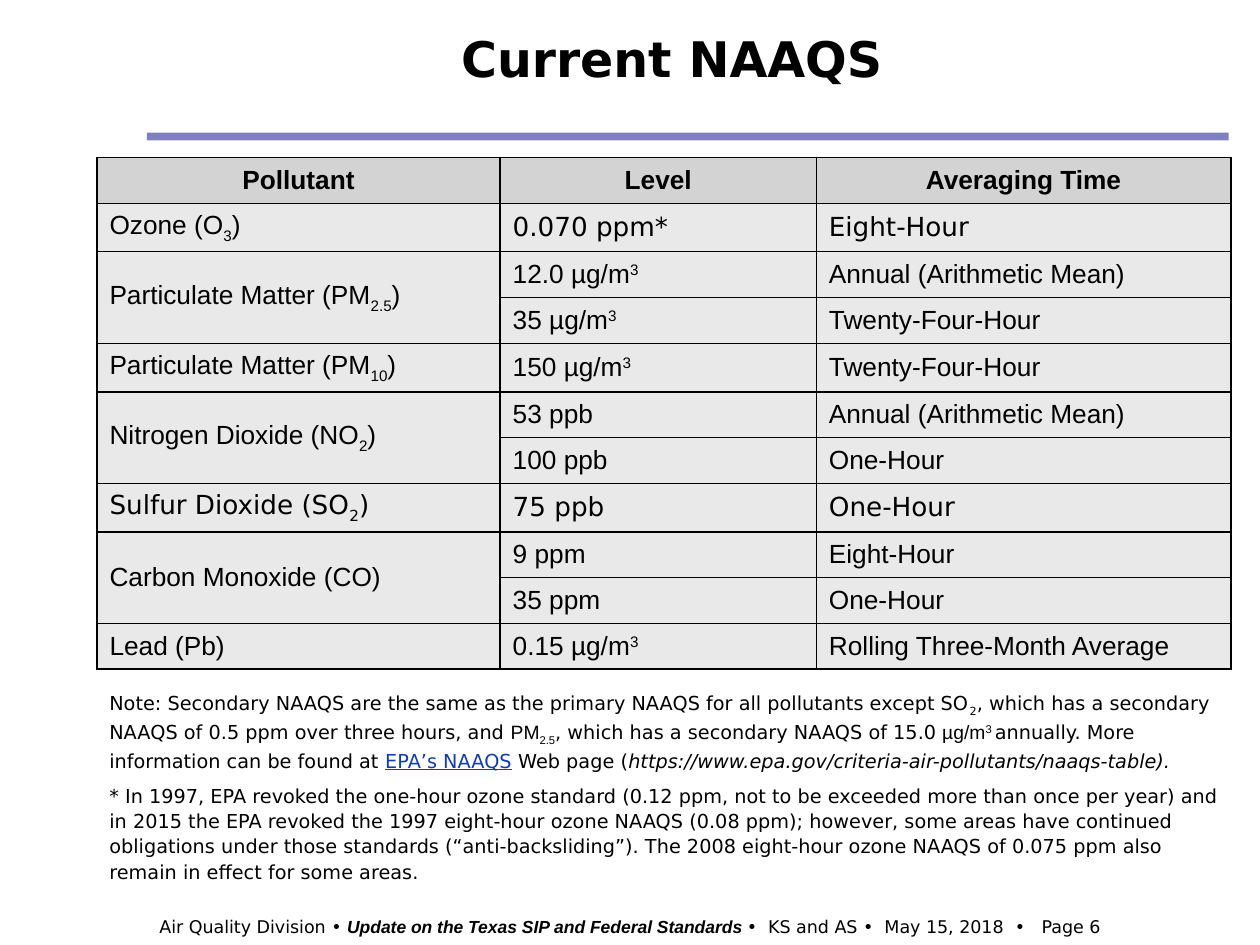
from lxml.etree import SubElement
from pptx import Presentation
from pptx.dml.color import RGBColor
from pptx.enum.shapes import MSO_CONNECTOR, MSO_SHAPE
from pptx.enum.text import MSO_ANCHOR, PP_ALIGN
from pptx.oxml.ns import qn
from pptx.util import Pt

COLORS = {"text": "000000", "rule": "000086", "head": "D3D3D3",
          "body": "E9E9E9", "paper": "FFFFFF", "link": "103CB6"}
SANS, ARIAL = "DejaVu Sans", "Arial"
BASELINES = {"_": "-25000", "^": "30000"}

TITLE = "Current NAAQS"
HEADERS = ["Pollutant", "Level", "Averaging Time"]
POLLUTANTS = [
    ("Ozone (O|_3|)", ARIAL, [("0.070 ppm*", "Eight-Hour", SANS)]),
    ("Particulate Matter (PM|_2.5|)", ARIAL,
     [("12.0 µg/m|^3", "Annual (Arithmetic Mean)", ARIAL),
      ("35 µg/m|^3", "Twenty-Four-Hour", ARIAL)]),
    ("Particulate Matter (PM|_10|)", ARIAL,
     [("150 µg/m|^3", "Twenty-Four-Hour", ARIAL)]),
    ("Nitrogen Dioxide (NO|_2|)", ARIAL,
     [("53 ppb", "Annual (Arithmetic Mean)", ARIAL),
      ("100 ppb", "One-Hour", ARIAL)]),
    ("Sulfur Dioxide (SO|_2|)", SANS, [("75 ppb", "One-Hour", SANS)]),
    ("Carbon Monoxide (CO)", ARIAL,
     [("9 ppm", "Eight-Hour", ARIAL), ("35 ppm", "One-Hour", ARIAL)]),
    ("Lead (Pb)", ARIAL,
     [("0.15 µg/m|^3", "Rolling Three-Month Average", ARIAL)]),
]
NOTES = [
    [("Note: Secondary NAAQS are the same as the primary NAAQS for all "
      "pollutants except SO|_2|, which has a secondary NAAQS of 0.5 ppm over "
      "three hours, and ", {}),
     ("PM|_2.5", {"name": ARIAL}),
     (", which has a secondary NAAQS of 15.0", {}),
     (" µg/m|^3 ", {"name": ARIAL}),
     ("annually. More information can be found at ", {}),
     ("EPA’s NAAQS", {"color": "link", "underline": True}),
     (" Web page (", {}),
     ("https://www.epa.gov/criteria-air-pollutants/naaqs-table).",
      {"italic": True})],
    [("* In 1997, EPA revoked the one-hour ozone standard (0.12 ppm, not to be "
      "exceeded more than once per year) and in 2015 the EPA revoked the 1997 "
      "eight-hour ozone NAAQS (0.08 ppm); however, some areas have continued "
      "obligations under those standards (“anti-backsliding”). The 2008 "
      "eight-hour ozone NAAQS of 0.075 ppm also remain in effect for some "
      "areas.", {})],
]
FOOTER = [
    ("Air Quality Division • ", {"name": SANS}),
    ("Update on the Texas SIP and Federal Standards ",
     {"name": ARIAL, "bold": True, "italic": True}),
    ("•  KS and AS •  May 15, 2018  •   Page 6", {"name": SANS}),
]


def rgb(key):
    return RGBColor.from_string(COLORS[key])


def style(font, color=None, **attrs):
    for name, value in attrs.items():
        setattr(font, name, value)
    if color:
        font.color.rgb = rgb(color)


def add_text(p, text, **attrs):
    for part in text.split("|"):
        baseline = BASELINES.get(part[:1])
        r = p.add_run()
        r.text = part[1:] if baseline else part
        if baseline:
            r._r.get_or_add_rPr().set("baseline", baseline)
        style(r.font, **attrs)


def set_borders(cell):
    tcPr = cell._tc.get_or_add_tcPr()
    for i, side in enumerate(("lnL", "lnR", "lnT", "lnB")):
        ln = tcPr.makeelement(qn(f"a:{side}"), {"w": str(Pt(1))})
        fill = SubElement(ln, qn("a:solidFill"))
        SubElement(fill, qn("a:srgbClr"), val=COLORS["text"])
        tcPr.insert(i, ln)


def fill_cell(cell, text, font, head=False):
    cell.vertical_anchor = MSO_ANCHOR.MIDDLE
    p = cell.text_frame.paragraphs[0]
    p.alignment = PP_ALIGN.CENTER if head else PP_ALIGN.LEFT
    style(p.font, "text", size=Pt(15), name=font, bold=head)
    add_text(p, text)


def add_rule(s):
    rule = s.shapes.add_connector(MSO_CONNECTOR.STRAIGHT,
                                  Pt(84), Pt(78), Pt(702), Pt(78))
    rule.line.width = Pt(4.5)
    rule.line.color.rgb = rgb("rule")
    SubElement(rule._element.find(".//" + qn("a:srgbClr")),
               qn("a:alpha"), val="50000")
    SubElement(rule._element.spPr, qn("a:effectLst"))


def add_footer(s):
    tf = s.shapes.add_textbox(0, Pt(520), Pt(720), Pt(19.5)).text_frame
    tf.word_wrap = True
    p = tf.paragraphs[0]
    p.alignment = PP_ALIGN.CENTER
    style(p.font, "text", size=Pt(10))
    for text, attrs in FOOTER:
        add_text(p, text, **attrs)


def add_standards(s):
    widths = [230.4, 180.7, 236.9]
    count = 1 + sum(len(limits) for _, _, limits in POLLUTANTS)
    table = s.shapes.add_table(count, len(widths), Pt(55.4), Pt(90),
                               Pt(sum(widths)), Pt(288)).table
    table.first_row = table.horz_banding = False
    for col, width in zip(table.columns, widths):
        col.width = Pt(width)
    for i, row in enumerate(table.rows):
        row.height = Pt(288 / count)
        for cell in row.cells:
            cell.fill.solid()
            cell.fill.fore_color.rgb = rgb("body" if i else "head")
            set_borders(cell)
    for j, header in enumerate(HEADERS):
        fill_cell(table.cell(0, j), header, ARIAL, head=True)
    i = 1
    for pollutant, font, limits in POLLUTANTS:
        fill_cell(table.cell(i, 0), pollutant, font)
        if len(limits) > 1:
            table.cell(i, 0).merge(table.cell(i + len(limits) - 1, 0))
        for level, time, limit_font in limits:
            fill_cell(table.cell(i, 1), level, limit_font)
            fill_cell(table.cell(i, 2), time, limit_font)
            i += 1


def add_title(s):
    title = s.shapes.title
    title.left, title.top = Pt(113.8), 0
    title.width, title.height = Pt(540), Pt(66)
    tf = title.text_frame
    tf.vertical_anchor = MSO_ANCHOR.MIDDLE
    p = tf.paragraphs[0]
    p.alignment = PP_ALIGN.CENTER
    style(p.font, "text", size=Pt(28), name=SANS, bold=True)
    add_text(p, TITLE)


def add_notes(s):
    sp = s.shapes.add_shape(MSO_SHAPE.RECTANGLE,
                            Pt(55.4), Pt(390), Pt(649.4), Pt(116.6))
    sp.shadow.inherit = False
    sp.fill.solid()
    sp.fill.fore_color.rgb = rgb("paper")
    sp.line.fill.background()
    tf = sp.text_frame
    tf.word_wrap = True
    tf.vertical_anchor = MSO_ANCHOR.TOP
    for i, note in enumerate(NOTES):
        p = tf.add_paragraph() if i else tf.paragraphs[0]
        p.alignment = PP_ALIGN.LEFT
        p.line_spacing = 1.1
        if i:
            p.space_before = Pt(5.5)
        style(p.font, "text", size=Pt(11), name=SANS)
        for text, attrs in note:
            add_text(p, text, **attrs)


def main():
    prs = Presentation()
    prs.slide_width, prs.slide_height = Pt(720), Pt(540)
    s = prs.slides.add_slide(prs.slide_layouts[5])
    add_rule(s)
    add_footer(s)
    add_standards(s)
    add_title(s)
    add_notes(s)
    prs.save("out.pptx")


if __name__ == "__main__":
    main()
